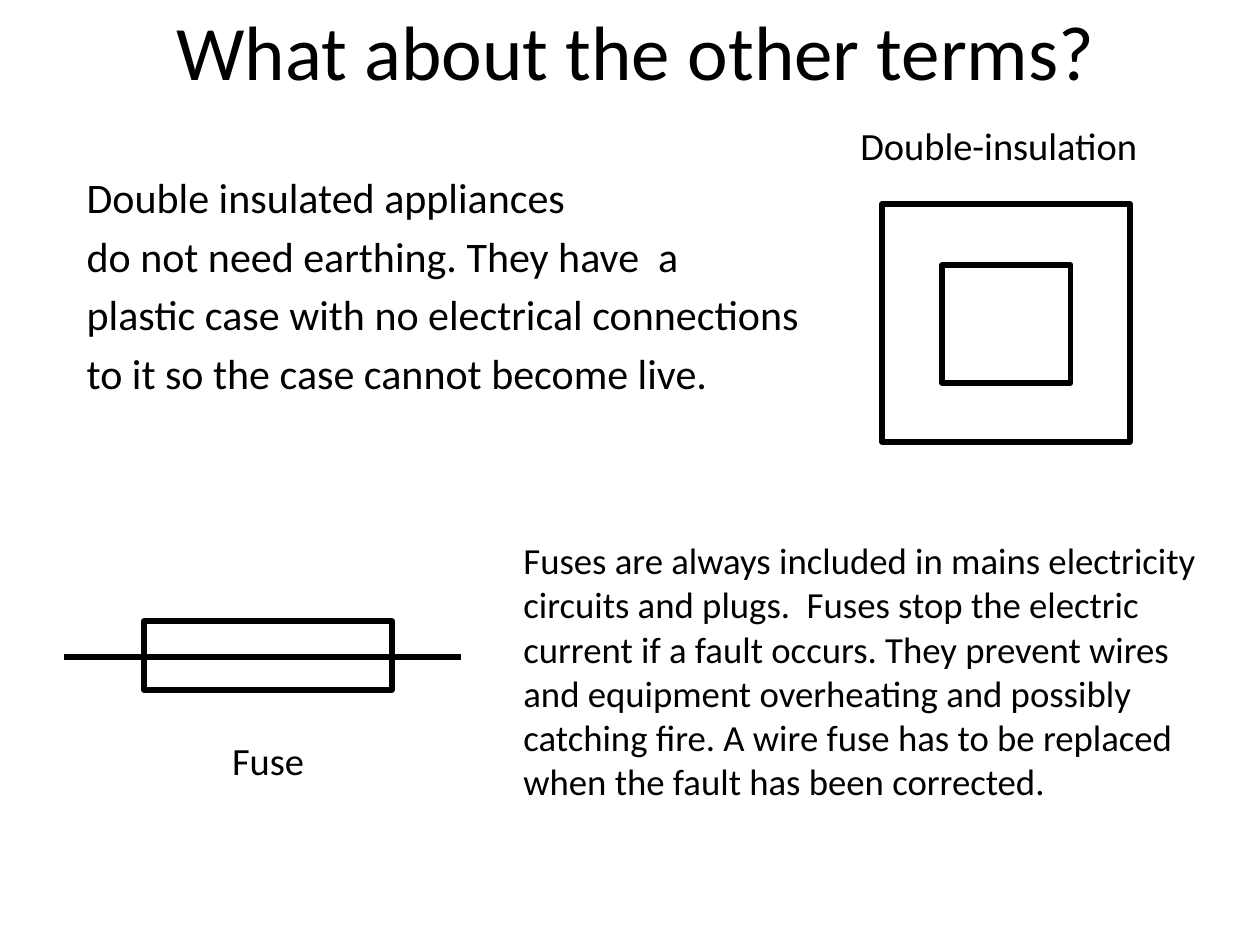
"""Build the slide on double insulation and fuses."""
from lxml import etree
from pptx import Presentation
from pptx.dml.color import RGBColor
from pptx.enum.shapes import MSO_CONNECTOR, MSO_SHAPE
from pptx.enum.text import MSO_ANCHOR, MSO_AUTO_SIZE, PP_ALIGN
from pptx.oxml.ns import qn
from pptx.util import Pt

PX = 914400 // 126
BLACK = RGBColor(0, 0, 0)
FONT = "Calibri"
LEFT, CENTER = PP_ALIGN.LEFT, PP_ALIGN.CENTER
MIDDLE, NO_FIT = MSO_ANCHOR.MIDDLE, MSO_AUTO_SIZE.NONE
RECT, STRAIGHT = MSO_SHAPE.RECTANGLE, MSO_CONNECTOR.STRAIGHT


def place(sp, x, y, w, h):
    sp.left, sp.top, sp.width, sp.height = x * PX, y * PX, w * PX, h * PX


def style(tf, size, align):
    tf.word_wrap = True
    tf.auto_size = NO_FIT
    for p in tf.paragraphs:
        p.alignment = align
        for r in p.runs:
            r.font.size = Pt(size)
            r.font.name = FONT
            r.font.color.rgb = BLACK


prs = Presentation()
prs.slide_width, prs.slide_height = 1260 * PX, 945 * PX
slide = prs.slides.add_slide(prs.slide_layouts[1])

title = slide.shapes.title
place(title, 69, -29, 1134, 158)
title.text_frame.text = "What about the other terms?"
title.text_frame.vertical_anchor = MIDDLE
style(title.text_frame, 44, CENTER)

body = slide.placeholders[1]
place(body, 74, 165, 774, 311)
body.text_frame.text = "\n".join([
    "Double insulated appliances",
    "do not need earthing. They have  a",
    "plastic case with no electrical connections",
    "to it so the case cannot become live.",
])
for p in body.text_frame.paragraphs:
    pPr = p._p.get_or_add_pPr()
    pPr.set("marL", str(48 * PX))
    pPr.set("indent", str(-48 * PX))
    etree.SubElement(pPr, qn("a:buNone"))
body.text_frame.paragraphs[0].space_before = Pt(0)
style(body.text_frame, 24, LEFT)

outer_square = (882, 204, 248, 238)
inner_square = (942, 265, 129, 118)
fuse_case = (144, 621, 248, 69)
for box in (outer_square, inner_square, fuse_case):
    sp = slide.shapes.add_shape(RECT, 0, 0, 0, 0)
    place(sp, *box)
    sp.shadow.inherit = False
    sp.fill.background()
    sp.line.color.rgb = BLACK
    sp.line.width = Pt(3)

wire = slide.shapes.add_connector(STRAIGHT, 64 * PX, 657 * PX, 461 * PX, 657 * PX)
wire.line.color.rgb = BLACK
wire.line.width = Pt(3)
etree.SubElement(wire._element.spPr, qn("a:effectLst"))

fuse_text = (
    "Fuses are always included in mains electricity circuits and plugs.  "
    "Fuses stop the electric current if a fault occurs. They prevent wires "
    "and equipment overheating and possibly catching fire. A wire fuse has "
    "to be replaced when the fault has been corrected."
)
for text, box, size, align in [
    ("Double-insulation", (848, 116, 338, 59), 22, LEFT),
    ("Fuse", (144, 731, 248, 59), 22, CENTER),
    (fuse_text, (511, 532, 699, 280), 21, LEFT),
]:
    sp = slide.shapes.add_textbox(0, 0, 0, 0)
    place(sp, *box)
    sp.text_frame.text = text
    style(sp.text_frame, size, align)

prs.save("out.pptx")
